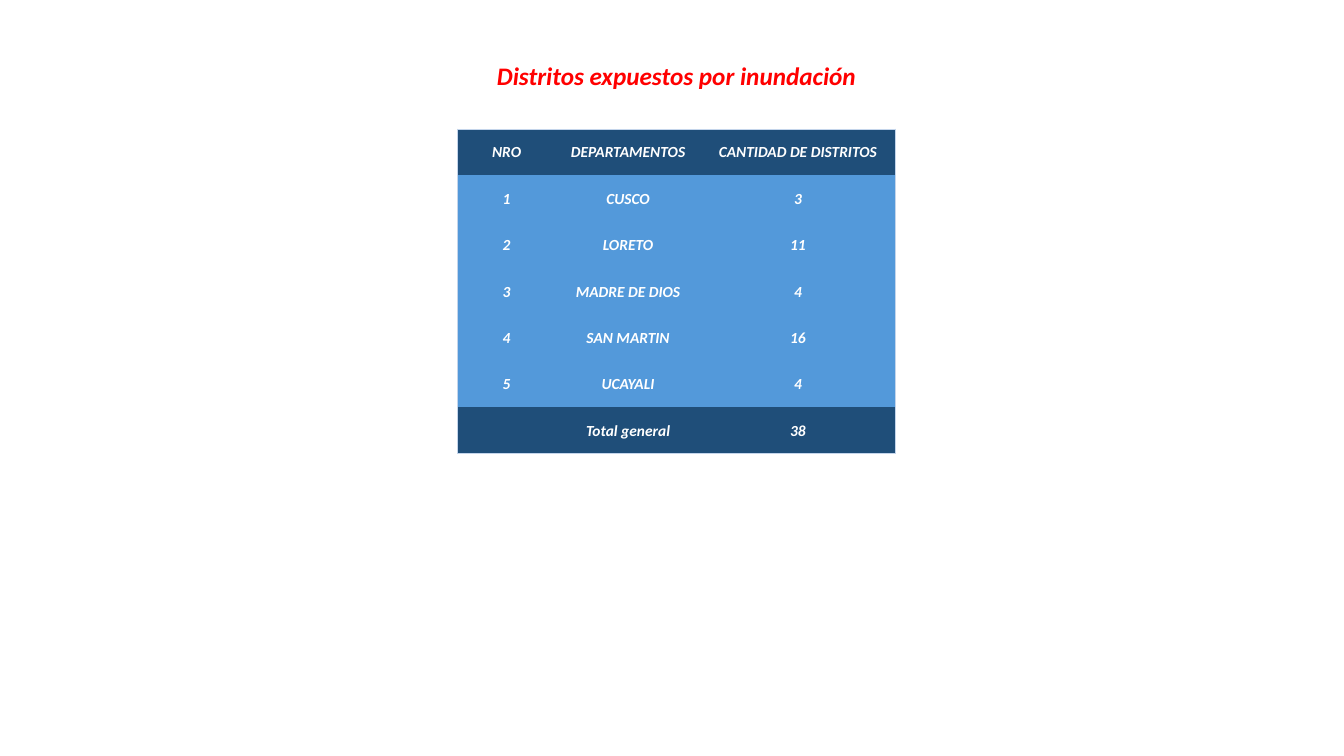
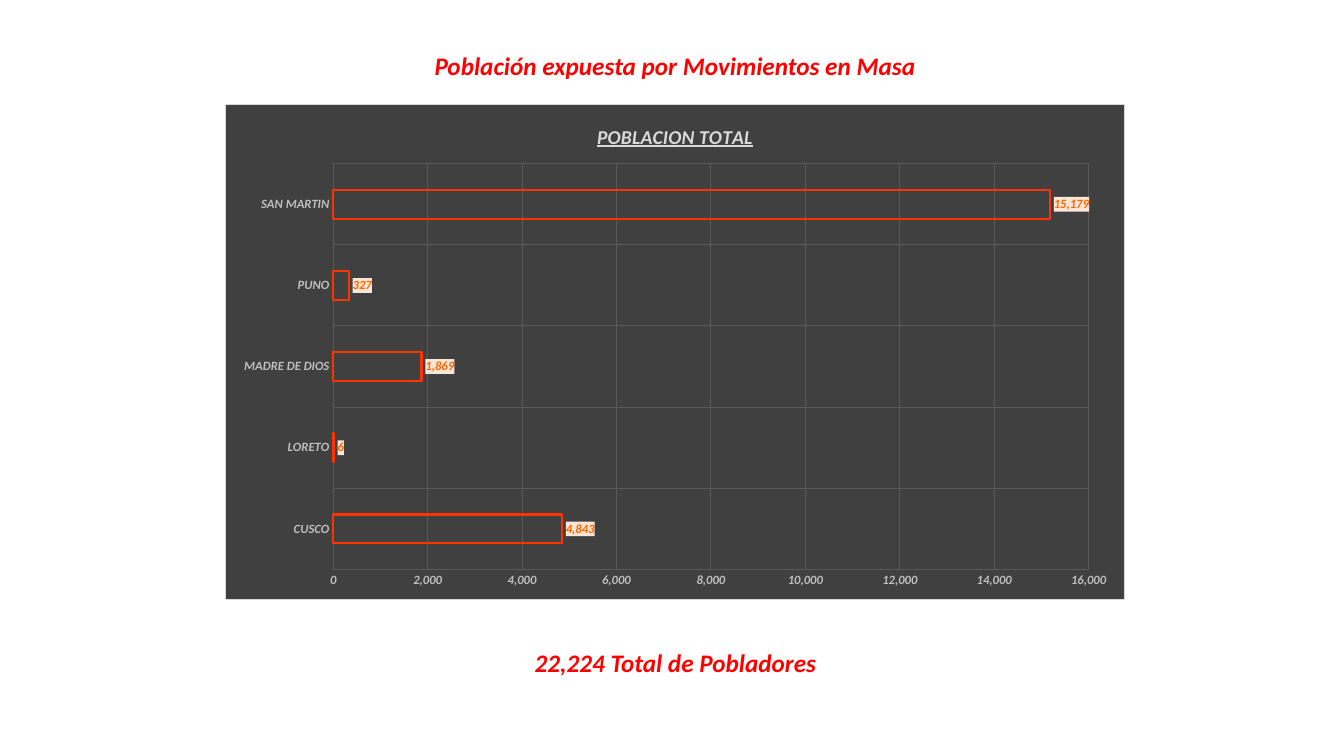
"""Build two slides: districts exposed to floods and people exposed to landslides."""
from dataclasses import dataclass

from pptx import Presentation
from pptx.chart.data import CategoryChartData
from pptx.dml.color import RGBColor
from pptx.enum.chart import XL_CHART_TYPE, XL_LABEL_POSITION, XL_TICK_MARK
from pptx.enum.text import MSO_ANCHOR, PP_ALIGN
from pptx.oxml import parse_xml
from pptx.oxml.ns import nsdecls
from pptx.util import Inches, Pt


@dataclass(frozen=True)
class Theme:
    font: str = "Calibri"
    title: str = "FF0000"
    white: str = "FFFFFF"
    band: str = "1F4E79"
    body: str = "5399DA"
    edge: str = "C4D5EB"
    panel: str = "404040"
    panel_edge: str = "D9D9D9"
    grid: str = "595959"
    axis: str = "BFBFBF"
    bar: str = "FF3300"
    label: str = "FF6600"
    label_fill: str = "FBE5D6"
    title_size: int = 18
    chart_title_size: int = 14
    table_size: int = 11
    axis_size: int = 9


THEME = Theme()

FLOOD_TITLE = "Distritos expuestos por inundación"
FLOOD_ROWS = [
    ("NRO", "DEPARTAMENTOS", "CANTIDAD DE DISTRITOS"),
    ("1", "CUSCO", "3"),
    ("2", "LORETO", "11"),
    ("3", "MADRE DE DIOS", "4"),
    ("4", "SAN MARTIN", "16"),
    ("5", "UCAYALI", "4"),
    ("", "Total general", "38"),
]
COLUMN_WIDTHS = (0.97, 1.44, 1.93)
ROW_HEIGHT = 0.46

LANDSLIDE_TITLE = "Población expuesta por Movimientos en Masa"
LANDSLIDE_TOTAL = "22,224 Total de Pobladores"
CHART_TITLE = "POBLACION TOTAL"
POPULATION = {"CUSCO": 4843, "LORETO": 6, "MADRE DE DIOS": 1869,
              "PUNO": 327, "SAN MARTIN": 15179}
PLOT_AREA = {"x": 0.12, "y": 0.12, "w": 0.84, "h": 0.82}
NUMBER_FORMAT = "#,##0"


def rgb(color):
    return RGBColor.from_string(color)


def style_font(font, size, color):
    font.name = THEME.font
    font.size = Pt(size)
    font.bold = font.italic = True
    font.color.rgb = rgb(color)


def write(tf, text, size, color):
    p = tf.paragraphs[0]
    p.alignment = PP_ALIGN.CENTER
    r = p.add_run()
    r.text = text
    style_font(r.font, size, color)
    return r


def write_heading(sp, text, left, top, width):
    sp.left, sp.top, sp.width, sp.height = map(Inches, (left, top, width, 0.4))
    tf = sp.text_frame
    tf.word_wrap = False
    tf.vertical_anchor = MSO_ANCHOR.MIDDLE
    write(tf, text, THEME.title_size, THEME.title)


def add_titled_slide(prs, title, left, top, width):
    s = prs.slides.add_slide(prs.slide_layouts[5])
    write_heading(s.shapes.title, title, left, top, width)
    return s


def solid(color):
    return f'<a:solidFill><a:srgbClr val="{color}"/></a:solidFill>'


def set_borders(cell, sides):
    tc_pr = cell._tc.get_or_add_tcPr()
    for i, (side, shown) in enumerate(sides.items()):
        paint = solid(THEME.edge) if shown else "<a:noFill/>"
        tc_pr.insert(i, parse_xml(
            f'<a:ln{side} {nsdecls("a")} w="{Pt(0.5)}">{paint}</a:ln{side}>'))


def add_flood_table(s):
    last_row, last_col = len(FLOOD_ROWS) - 1, len(COLUMN_WIDTHS) - 1
    table = s.shapes.add_table(
        last_row + 1, last_col + 1, Inches(4.54), Inches(1.28),
        Inches(sum(COLUMN_WIDTHS)), Inches(ROW_HEIGHT * len(FLOOD_ROWS))).table
    table.first_row = table.horz_banding = False
    for col, width in zip(table.columns, COLUMN_WIDTHS):
        col.width = Inches(width)
    for i, values in enumerate(FLOOD_ROWS):
        table.rows[i].height = Inches(ROW_HEIGHT)
        for j, value in enumerate(values):
            cell = table.cell(i, j)
            cell.vertical_anchor = MSO_ANCHOR.MIDDLE
            cell.margin_left = cell.margin_right = cell.margin_top = Inches(0.01)
            cell.margin_bottom = 0
            cell.fill.solid()
            cell.fill.fore_color.rgb = rgb(
                THEME.band if i in (0, last_row) else THEME.body)
            set_borders(cell, {"L": j == 0, "R": j == last_col,
                               "T": i == 0, "B": i == last_row})
            if value:
                write(cell.text_frame, value, THEME.table_size, THEME.white)


def chart_box(fill, line=""):
    return parse_xml(f'<c:spPr {nsdecls("c", "a")}>{solid(fill)}{line}</c:spPr>')


def style_axis(axis):
    axis.has_major_gridlines = True
    grid = axis.major_gridlines.format.line
    grid.color.rgb = rgb(THEME.grid)
    grid.width = Pt(0.75)
    axis.major_tick_mark = axis.minor_tick_mark = XL_TICK_MARK.NONE
    axis.format.line.fill.background()
    style_font(axis.tick_labels.font, THEME.axis_size, THEME.axis)


def place_plot(chart):
    plot_area = chart._chartSpace.chart.plotArea
    for old in plot_area.xpath("c:layout"):
        plot_area.remove(old)
    modes = "".join(f'<c:{k}Mode val="edge"/>' for k in "xy")
    sizes = "".join(f'<c:{k} val="{v}"/>' for k, v in PLOT_AREA.items())
    plot_area.insert(0, parse_xml(
        f'<c:layout {nsdecls("c")}><c:manualLayout><c:layoutTarget val="inner"/>'
        f'{modes}{sizes}</c:manualLayout></c:layout>'))


def style_bars(plot):
    plot.gap_width, plot.overlap = 182, -50
    plot.vary_by_categories = False
    bars = plot.series[0]
    bars.format.fill.background()
    bars.format.line.color.rgb = rgb(THEME.bar)
    bars.format.line.width = Pt(1.5)
    labels = bars.data_labels
    labels.show_value = True
    labels.position = XL_LABEL_POSITION.OUTSIDE_END
    labels.number_format = NUMBER_FORMAT
    labels.number_format_is_linked = False
    style_font(labels.font, THEME.axis_size, THEME.label)
    labels._element.find("c:txPr", labels._element.nsmap).addprevious(
        chart_box(THEME.label_fill))


def add_population_chart(s):
    data = CategoryChartData(number_format=NUMBER_FORMAT)
    data.categories = list(POPULATION)
    data.add_series(CHART_TITLE, list(POPULATION.values()))
    chart = s.shapes.add_chart(
        XL_CHART_TYPE.BAR_CLUSTERED, Inches(2.23), Inches(1.03),
        Inches(8.93), Inches(4.92), data).chart
    chart.has_legend = False
    chart.font.name = THEME.font
    chart.has_title = True
    r = write(chart.chart_title.text_frame, CHART_TITLE,
              THEME.chart_title_size, THEME.panel_edge)
    r.font.underline = True
    chart.chart_title.include_in_layout = False
    chart._chartSpace.chart.addnext(chart_box(
        THEME.panel, f'<a:ln w="{Pt(0.75)}">{solid(THEME.panel_edge)}</a:ln>'))
    style_axis(chart.category_axis)
    style_axis(chart.value_axis)
    value_axis = chart.value_axis
    value_axis.minimum_scale, value_axis.maximum_scale = 0, 16000
    value_axis.major_unit = 2000
    value_axis.tick_labels.number_format = NUMBER_FORMAT
    value_axis.tick_labels.number_format_is_linked = False
    place_plot(chart)
    style_bars(chart.plots[0])


def main():
    prs = Presentation()
    prs.slide_width, prs.slide_height = Inches(13.33), Inches(7.5)
    flood = add_titled_slide(prs, FLOOD_TITLE, 4.81, 0.55, 3.8)
    add_flood_table(flood)
    landslide = add_titled_slide(prs, LANDSLIDE_TITLE, 4.18, 0.45, 5.03)
    total = landslide.shapes.add_textbox(0, 0, 0, 0)
    write_heading(total, LANDSLIDE_TOTAL, 5.03, 6.37, 3.34)
    add_population_chart(landslide)
    prs.save("out.pptx")


if __name__ == "__main__":
    main()
